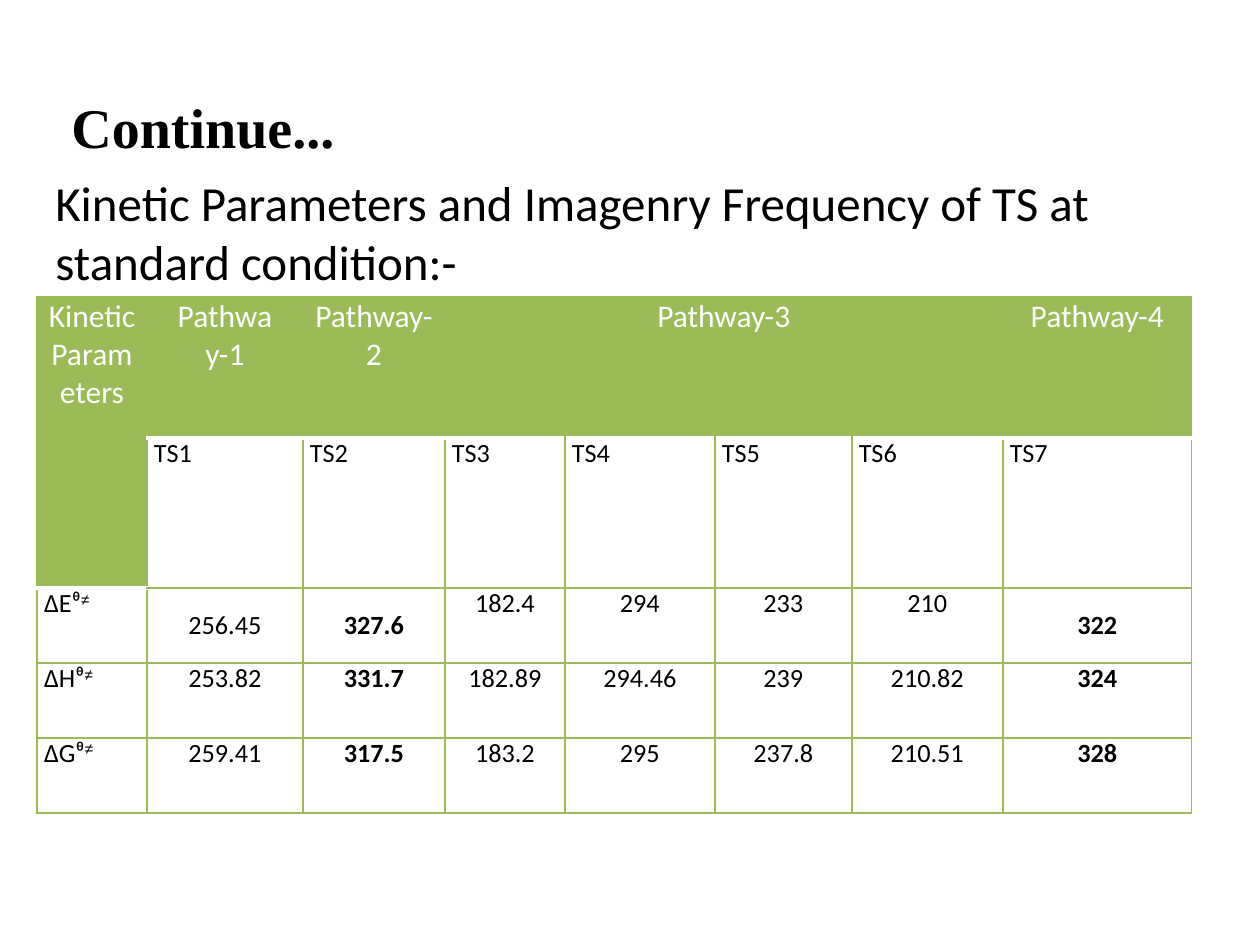
from lxml import etree
from pptx import Presentation
from pptx import util as u
from pptx.dml.color import RGBColor
from pptx.enum import text
from pptx.oxml.ns import qn

PX = u.Inches(1) // 126
GREEN = RGBColor(0x9B, 0xBB, 0x59)
WHITE = RGBColor(0xFF, 0xFF, 0xFF)
BLACK = RGBColor(0, 0, 0)

COLS = [110, 156, 142, 120, 150, 137, 151, 189]
ROWS = [141, 150, 75, 75, 75]
HEAD = ["Kinetic Parameters", "Pathwa\vy-1", "Pathway-2", "Pathway-3",
        "", "", "", "Pathway-4"]
STATES = [""] + [f"TS{n}" for n in range(1, 8)]
DATA = [
    ["∆Eᶿ", "256.45", "327.6", "182.4", "294", "233", "210", "322"],
    ["∆Hᶿ", "253.82", "331.7", "182.89", "294.46", "239", "210.82", "324"],
    ["∆Gᶿ", "259.41", "317.5", "183.2", "295", "237.8", "210.51", "328"],
]
BOLD = (2, 7)
MIDDLE = (1, 2, 7)


def add_run(para, words, size, color, font="Calibri", bold=False):
    run = para.add_run()
    run.text = words
    face = run.font
    face.name, face.size, face.bold = font, u.Pt(size), bold
    face.color.rgb = color
    return run


def add_label(slide, box, words, size, font="Calibri", bold=False):
    frame = slide.shapes.add_textbox(*(n * PX for n in box)).text_frame
    frame.word_wrap = True
    add_run(frame.paragraphs[0], words, size, BLACK, font, bold)


def set_edges(cell, white):
    """Draw the four borders, white and thick on the sides named in white."""
    props = cell._tc.get_or_add_tcPr()
    for i, side in enumerate("LRTB"):
        thick = side in white
        line = etree.Element(qn(f"a:ln{side}"),
                             w=str(u.Pt(2.25 if thick else 1)))
        fill = etree.SubElement(line, qn("a:solidFill"))
        etree.SubElement(fill, qn("a:srgbClr"),
                         val=str(WHITE if thick else GREEN))
        props.insert(i, line)


def fill_cell(cell, row, col, words):
    head = row == 0 or (row == 1 and col == 0)
    cell.margin_left = cell.margin_right = 7 * PX
    cell.margin_top = cell.margin_bottom = 0
    cell.fill.solid()
    cell.fill.fore_color.rgb = GREEN if head else WHITE
    above = row == 2 if col == 0 else row == 1
    set_edges(cell, ("T" if above else "") + ("B" if head else ""))
    if row == 2 and col in MIDDLE:
        cell.vertical_anchor = text.MSO_ANCHOR.MIDDLE
    if not words:
        return
    para = cell.text_frame.paragraphs[0]
    if head or (row > 1 and col > 0):
        para.alignment = text.PP_ALIGN.CENTER
    size, color = (18, WHITE) if head else (15, BLACK)
    for i, part in enumerate(words.split("\v")):
        if i:
            para.add_line_break()
        add_run(para, part, size, color, bold=row > 1 and col in BOLD)
    if row > 1 and col == 0:
        mark = add_run(para, "≠", size, color, "Arial")
        mark.font._element.set("baseline", "30000")


def add_grid(slide, left, top):
    rows = [HEAD, STATES] + DATA
    box = (left, top, sum(COLS), sum(ROWS))
    grid = slide.shapes.add_table(len(ROWS), len(COLS),
                                  *(n * PX for n in box)).table
    grid.first_row = grid.horz_banding = False
    for col, wide in zip(grid.columns, COLS):
        col.width = wide * PX
    for row, high in zip(grid.rows, ROWS):
        row.height = high * PX
    for r, line in enumerate(rows):
        for c, words in enumerate(line):
            fill_cell(grid.cell(r, c), r, c, words)
    grid.cell(0, 0).merge(grid.cell(1, 0))
    grid.cell(0, 3).merge(grid.cell(0, 6))


def main():
    deck = Presentation()
    deck.slide_width, deck.slide_height = u.Inches(10), u.Inches(7.5)
    slide = deck.slides.add_slide(deck.slide_layouts[6])
    add_grid(slide, 37, 297)
    add_label(slide, (43, 166, 1174, 131),
              "Kinetic Parameters and Imagenry Frequency of TS "
              "at standard condition:-", 28)
    add_label(slide, (59, 86, 358, 81), "Continue...", 32,
              "Times New Roman", True)
    deck.save("out.pptx")


if __name__ == "__main__":
    main()
